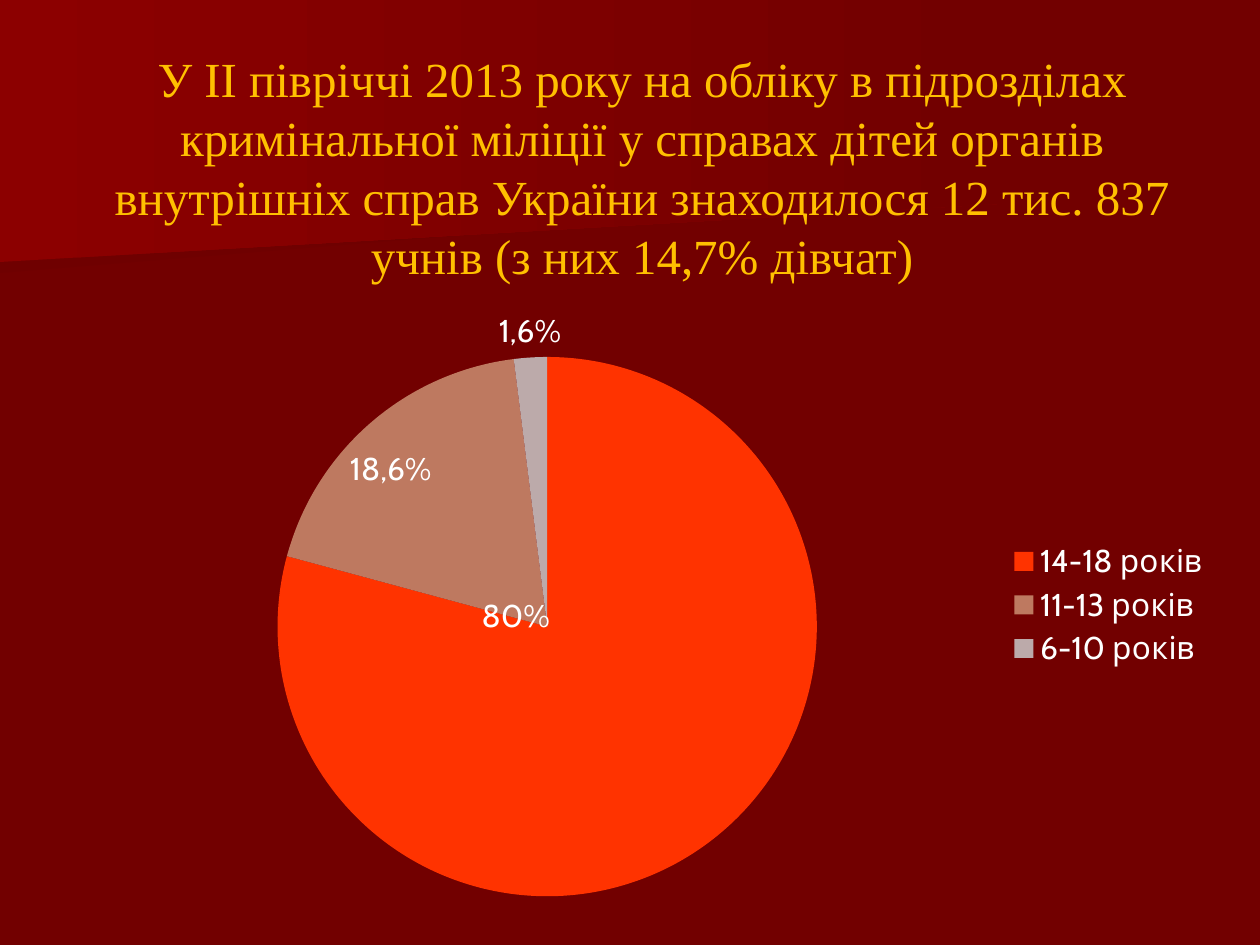
from lxml.etree import SubElement as Sub, Element
from pptx import Presentation
from pptx.chart.data import CategoryChartData as Data
from pptx.dml.color import RGBColor as RGB
from pptx.enum.chart import XL_CHART_TYPE as Kind, XL_LABEL_POSITION as Spot
from pptx.enum.chart import XL_LEGEND_POSITION as Side
from pptx.enum.text import MSO_ANCHOR as Anchor, PP_ALIGN as Align
from pptx.oxml.ns import qn
from pptx.util import Emu, Pt

PX = 914400 // 126
BACK = RGB(0x72, 0x00, 0x00)
SHADE = RGB(0x6F, 0x00, 0x00)
GLOW = RGB(0x8C, 0x00, 0x00)
GOLD = RGB(0xFF, 0xC0, 0x00)
WHITE = RGB(0xFF, 0xFF, 0xFF)
RED = RGB(0xFF, 0x33, 0x00)
CLAY = RGB(0xBE, 0x79, 0x60)
ASH = RGB(0xBC, 0xAA, 0xAA)

TITLE = ("У ІІ півріччі 2013 року на обліку в підрозділах кримінальної міліції "
         "у справах дітей органів внутрішніх справ України знаходилося "
         "12 тис. 837 учнів (з них 14,7% дівчат)")
AGES = [
    ("14-18 років", 80, "80%", RED, Spot.CENTER, (-0.1, -0.19)),
    ("11-13 років", 19, "18,6%", CLAY, Spot.CENTER, (-0.06, -0.09)),
    ("6-10 років", 2, "1,6%", ASH, Spot.OUTSIDE_END, None),
]


def box(*sides):
    """Turn px lengths into EMU."""
    return [Emu(side * PX) for side in sides]


def put(frame, text, font="Cabin", size=18, color=WHITE, align=Align.CENTER):
    """Write one formatted paragraph into a text frame."""
    para = frame.paragraphs[0]
    para.alignment = align
    run = para.add_run()
    run.text = text
    run.font.name = font
    run.font.size = Pt(size)
    run.font.color.rgb = color


def band(slide, points, start):
    """Draw a background band that fades into the slide colour."""
    pen = slide.shapes.build_freeform(*points[0], scale=PX)
    pen.add_line_segments(points[1:], close=True)
    shape = pen.convert_to_shape()
    shape.shadow.inherit = False
    shape.line.fill.background()
    shape.fill.gradient()
    shape.fill.gradient_angle = 0
    for stop, color, place in zip(shape.fill.gradient_stops, (start, BACK), (0, 1)):
        stop.color.rgb = color
        stop.position = place


def title(slide, text):
    """Add the centred heading."""
    frame = slide.shapes.add_textbox(*box(63, 38, 1158, 257)).text_frame
    frame.word_wrap = True
    frame.vertical_anchor = Anchor.MIDDLE
    put(frame, text, font="Times New Roman", size=28, color=GOLD)


def place(owner, index, **values):
    """Give a chart part a manual layout."""
    for old in owner.findall(qn("c:layout")):
        owner.remove(old)
    layout = Element(qn("c:layout"))
    manual = Sub(layout, qn("c:manualLayout"))
    for name, value in values.items():
        Sub(manual, qn(f"c:{name}")).set("val", str(value))
    owner.insert(index, layout)


def pie(slide, rows):
    """Add the pie chart with its labels and legend."""
    data = Data()
    data.categories = [row[0] for row in rows]
    data.add_series("Series 1", [row[1] for row in rows])
    chart = slide.shapes.add_chart(Kind.PIE, *box(88, 295, 1134, 620), data).chart
    chart.has_title = False
    chart.font.name = "Cabin"
    chart.font.size = Pt(18)
    chart.font.color.rgb = WHITE
    chart.has_legend = True
    chart.legend.position = Side.RIGHT
    chart.legend.include_in_layout = False
    chart.plots[0].vary_by_categories = True
    series = chart.plots[0].series[0]
    for i, (_, _, text, color, spot, _) in enumerate(rows):
        point = series.points[i]
        point.format.fill.solid()
        point.format.fill.fore_color.rgb = color
        point.format.line.fill.background()
        label = point.data_label
        put(label.text_frame, text)
        label.position = spot
    root = chart.element
    for node, row in zip(root.iter(qn("c:dLbl")), rows):
        if row[5]:
            place(node, 1, x=row[5][0], y=row[5][1])
    edge = {"xMode": "edge", "yMode": "edge"}
    plot = next(root.iter(qn("c:plotArea")))
    place(plot, 0, layoutTarget="inner", **edge, x=0.16, y=0.1, w=0.49, h=0.87)
    key = next(root.iter(qn("c:legend")))
    place(key, 1, **edge, x=0.81, y=0.39, w=0.18, h=0.22)


def main():
    """Build and save the slide."""
    deck = Presentation()
    deck.slide_width, deck.slide_height = box(1260, 945)
    slide = deck.slides.add_slide(deck.slide_layouts[6])
    slide.background.fill.solid()
    slide.background.fill.fore_color.rgb = BACK
    band(slide, [(980, 193), (0, 273), (0, 127), (982, 127), (980, 161)], SHADE)
    band(slide, [(998, 204), (0, 262), (0, 0), (998, 0)], GLOW)
    title(slide, TITLE)
    pie(slide, AGES)
    deck.save("out.pptx")


if __name__ == "__main__":
    main()
